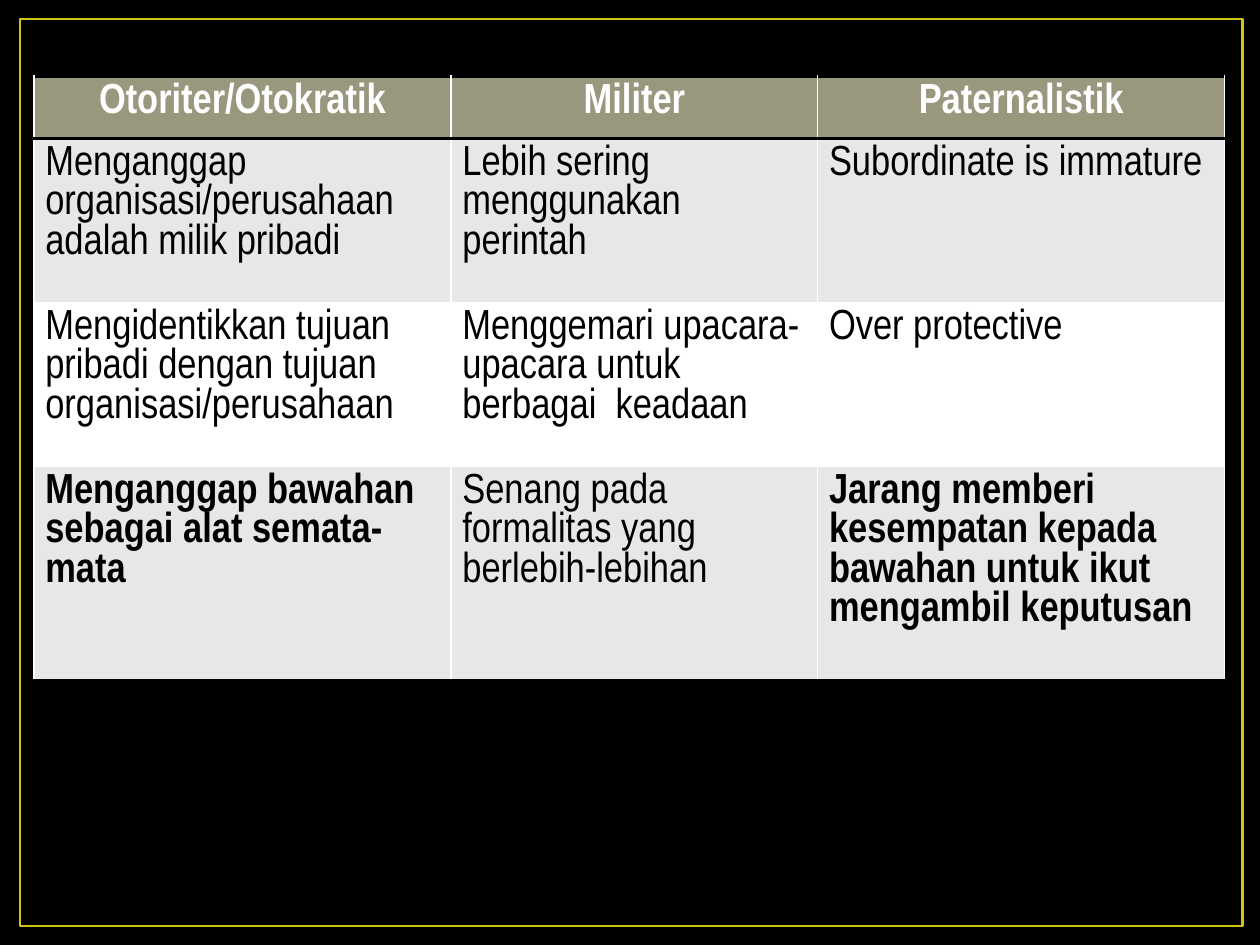
from lxml.etree import SubElement
from pptx import Presentation
from pptx.dml.color import RGBColor
from pptx.enum.shapes import MSO_SHAPE
from pptx.enum.text import PP_ALIGN
from pptx.oxml.ns import qn
from pptx.util import Inches, Pt

COLORS = {
    "black": "000000",
    "white": "FFFFFF",
    "frame": "CFC60D",
    "header": "99987F",
    "band": "E7E7E7",
}


def rgb(name):
    return RGBColor.from_string(COLORS[name])


def fill_cell(cell, text, fill, color="black", bold=False, align=PP_ALIGN.LEFT, borders=()):
    """Write a formatted cell; borders lists line tags such as a:lnT in schema order."""
    cell.margin_left = cell.margin_right = Inches(0.09)
    cell.margin_top = cell.margin_bottom = Inches(0.05)
    tcPr = cell._tc.get_or_add_tcPr()
    for tag in borders:
        ln = SubElement(tcPr, qn(tag), w=str(Pt(2)))
        solid = SubElement(ln, qn("a:solidFill"))
        SubElement(solid, qn("a:srgbClr"), val=COLORS["black"])
    cell.fill.solid()
    cell.fill.fore_color.rgb = rgb(fill)
    p = cell.text_frame.paragraphs[0]
    p.alignment = align
    r = p.add_run()
    r.text = text
    r.font.name = "Arial Narrow"
    r.font.size = Pt(24)
    r.font.bold = bold
    r.font.color.rgb = rgb(color)


prs = Presentation()
prs.slide_width, prs.slide_height = Inches(10), Inches(7.5)
s = prs.slides.add_slide(prs.slide_layouts[6])
s.background.fill.solid()
s.background.fill.fore_color.rgb = rgb("black")

frame = s.shapes.add_shape(
    MSO_SHAPE.RECTANGLE, Inches(0.16), Inches(0.15), Inches(9.7), Inches(7.2))
frame.shadow.inherit = False
frame.fill.background()
frame.line.color.rgb = rgb("frame")
frame.line.width = Pt(1.5)

headers = ["Otoriter/Otokratik", "Militer", "Paternalistik"]
rows = [
    ["Menganggap organisasi/perusahaan adalah milik pribadi",
     "Lebih sering menggunakan perintah",
     "Subordinate is immature"],
    ["Mengidentikkan tujuan pribadi dengan tujuan organisasi/perusahaan",
     "Menggemari upacara-upacara untuk berbagai  keadaan",
     "Over protective"],
    ["Menganggap bawahan sebagai alat semata-mata",
     "Senang pada formalitas yang berlebih-lebihan",
     "Jarang memberi kesempatan kepada bawahan untuk ikut mengambil keputusan"],
]
bold_cells = {(3, 0), (3, 2)}
col_widths = [3.31, 2.91, 3.23]
row_heights = [0.49, 1.3, 1.3, 1.7]

table = s.shapes.add_table(
    len(row_heights), len(col_widths), Inches(0.27), Inches(0.61),
    Inches(sum(col_widths)), Inches(sum(row_heights))).table
for col, width in zip(table.columns, col_widths):
    col.width = Inches(width)
for row, height in zip(table.rows, row_heights):
    row.height = Inches(height)

for j, text in enumerate(headers):
    fill_cell(table.cell(0, j), text, "header", color="white", bold=True,
              align=PP_ALIGN.CENTER, borders=("a:lnT", "a:lnB"))
for i, texts in enumerate(rows, start=1):
    for j, text in enumerate(texts):
        fill_cell(table.cell(i, j), text, "band" if i % 2 else "white",
                  bold=(i, j) in bold_cells,
                  borders=("a:lnB",) if i == len(rows) else ())

prs.save("out.pptx")
